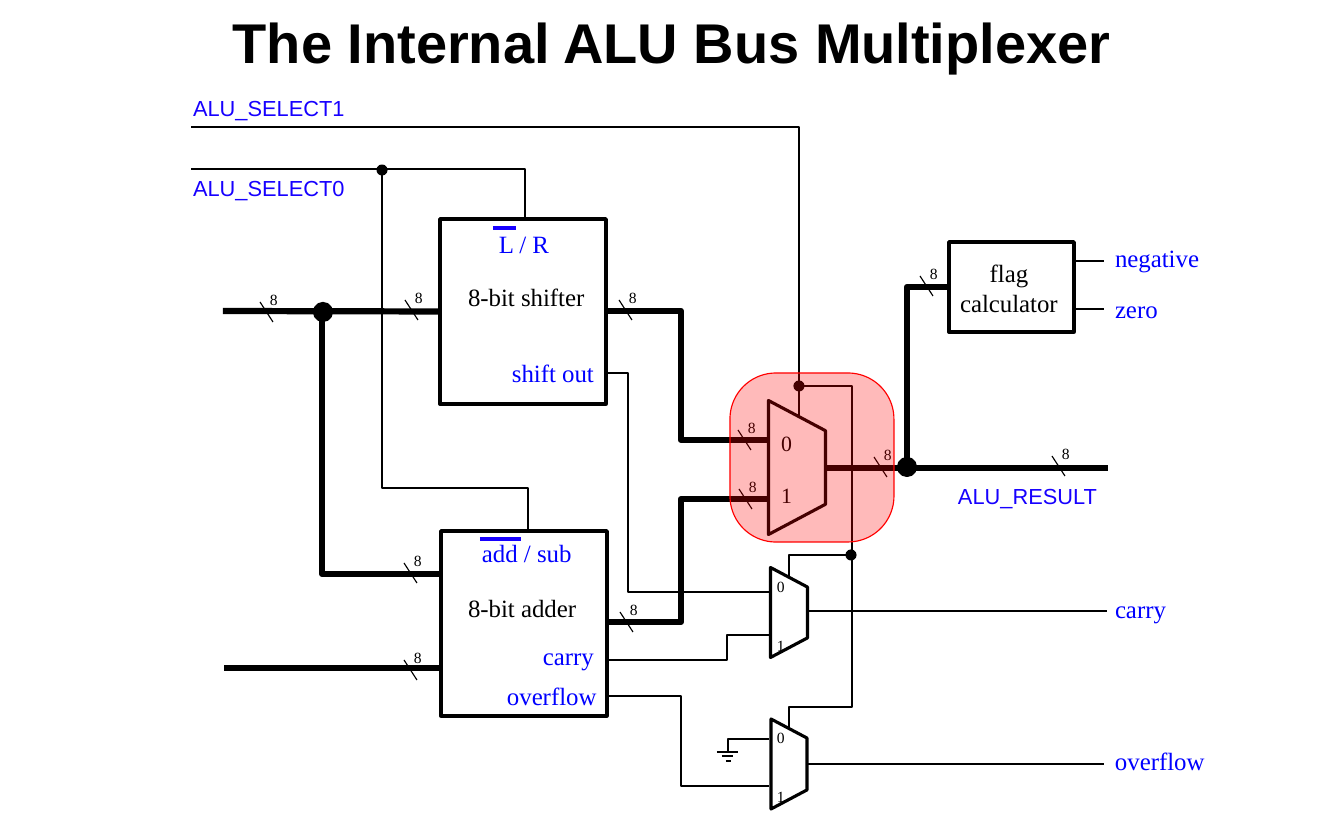
from pptx import Presentation
from pptx import util as u
from pptx.dml.color import RGBColor
from pptx.enum import shapes, text
from pptx.oxml import parse_xml
from pptx.oxml.ns import nsdecls, qn
from lxml import etree

EMU = 914400 / 112
SERIF, SANS = "Times New Roman", "Arial"
BLACK, WHITE, RED = "000000", "FFFFFF", "FF0000"
SIGNAL, SELECT = "0000FF", "1700FF"
BUS, WIRE, EDGE, BLOCK, THIN = 4, 1.5, 2, 2.25, 0.75

TITLE = "The Internal ALU Bus Multiplexer"
BLOCKS = {"shifter": (440, 219, 166, 185), "adder": (441, 531, 166, 185),
          "flags": (949, 242, 125, 90)}
MUXES = [(730, 439, 134, 57), (744, 594, 90, 37), (744, 746, 90, 36)]
MUX_LABELS = [(770, 424, 54, 95, 14, 17, True), (766, 571, 30, 81, 10, 26, False),
              (766, 722, 30, 81, 10, 26, False)]
BLOCK_LABELS = [
    (952, 258, 114, 60, ["flag", "calculator"], BLACK),
    (468, 593, 120, 30, ["8-bit adder"], BLACK),
    (468, 282, 120, 30, ["8-bit shifter"], BLACK),
    (482, 538, 100, 30, ["add / sub"], SIGNAL),
    (543, 641, 60, 30, ["carry"], SIGNAL),
    (507, 681, 97, 30, ["overflow"], SIGNAL),
    (499, 229, 70, 30, ["L / R"], SIGNAL),
    (512, 358, 92, 30, ["shift out"], SIGNAL),
    (1115, 594, 60, 30, ["carry"], SIGNAL),
    (1115, 746, 97, 30, ["overflow"], SIGNAL),
    (1115, 243, 96, 30, ["negative"], SIGNAL),
    (1115, 294, 60, 30, ["zero"], SIGNAL),
]
SELECT_LABELS = [(182, 89, 176, "ALU_SELECT1"), (182, 169, 176, "ALU_SELECT0"),
                 (947, 477, 162, "ALU_RESULT")]
LINES = [
    (741, 441, 769, 441, EDGE, BLACK), (740, 498, 768, 498, EDGE, BLACK),
    (808, 611, 1107, 611, WIRE, BLACK), (807, 764, 1104, 764, WIRE, BLACK),
    (480, 539, 521, 539, EDGE, SELECT), (493, 228, 516, 228, EDGE, SELECT),
    (224, 668, 440, 668, BUS, BLACK), (827, 468, 1108, 468, BUS, BLACK),
    (1075, 261, 1104, 261, WIRE, BLACK), (1074, 309, 1104, 309, WIRE, BLACK),
    (717, 752, 738, 752, WIRE, BLACK), (722, 756, 733, 756, WIRE, BLACK),
    (726, 761, 731, 761, WIRE, BLACK),
]
ROUTES = [
    (BUS, [(608, 622), (681, 622), (681, 499), (769, 499)]),
    (BUS, [(607, 311), (681, 311), (681, 440), (769, 440)]),
    (BUS, [(322, 311), (322, 574), (440, 574)]),
    (BUS, [(907, 466), (907, 287), (949, 287)]),
    (WIRE, [(528, 531), (528, 488), (382, 488), (382, 169)]),
    (WIRE, [(525, 219), (525, 169), (191, 169)]),
    (WIRE, [(799, 416), (799, 127), (191, 127)]),
    (WIRE, [(789, 578), (789, 555), (851, 555)]),
    (WIRE, [(607, 696), (681, 696), (681, 786), (769, 786)]),
    (WIRE, [(606, 373), (628, 373), (628, 592), (771, 592)]),
    (WIRE, [(608, 660), (727, 660), (727, 635), (769, 635)]),
    (WIRE, [(789, 729), (789, 707), (852, 707), (852, 386), (799, 386)]),
    (WIRE, [(728, 753), (728, 739), (769, 739)]),
]
BUS_MARKS = [(619, 300), (260, 302), (404, 563), (404, 660), (405, 300), (620, 612),
             (920, 276), (874, 457), (1052, 456), (738, 430), (739, 489)]
DOTS = [(851, 555, 8), (799, 386, 8), (382, 170, 8), (907, 467, 17), (323, 312, 17)]
HIGHLIGHT = (730, 373, 164, 169)


def px(*values):
    return [u.Emu(round(value * EMU)) for value in values]


def color(value):
    return RGBColor.from_string(value)


def finish(shape, fill, line, width):
    shape.shadow.inherit = False
    if fill:
        shape.fill.solid()
        shape.fill.fore_color.rgb = color(fill)
    else:
        shape.fill.background()
    shape.line.color.rgb = color(line)
    shape.line.width = u.Pt(width)
    return shape


def add_shape(kind, place, fill, line, width):
    return finish(page.shapes.add_shape(kind, *px(*place)), fill, line, width)


def add_line(x1, y1, x2, y2, width, line):
    wire = page.shapes.add_connector(shapes.MSO_CONNECTOR.STRAIGHT, *px(x1, y1, x2, y2))
    wire.line.color.rgb = color(line)
    wire.line.width = u.Pt(width)
    wire._element.spPr.append(parse_xml(f"<a:effectLst {nsdecls('a')}/>"))
    return wire


def add_span(para, words, size, font, ink):
    span = para.add_run()
    span.text = words
    span.font.size = u.Pt(size)
    span.font.name = font
    span.font.color.rgb = color(ink)
    return span


def add_label(place, lines, size, font, ink, inset=True, wrap=False, gap=0):
    frame = page.shapes.add_textbox(*px(*place)).text_frame
    frame.word_wrap = wrap
    frame.auto_size = text.MSO_AUTO_SIZE.SHAPE_TO_FIT_TEXT
    if not inset:
        frame.margin_left = frame.margin_right = frame.margin_top = frame.margin_bottom = 0
    for index, words in enumerate(lines):
        para = frame.add_paragraph() if index else frame.paragraphs[0]
        if index:
            para.space_before = u.Pt(gap)
        if len(lines) > 1 and not inset:
            para.alignment = text.PP_ALIGN.CENTER
        add_span(para, words, size, font, ink)


deck = Presentation()
deck.slide_width, deck.slide_height = px(1344, 840)
page = deck.slides.add_slide(deck.slide_layouts[5])

title = page.shapes.title
title.left, title.top, title.width, title.height = px(112, -1, 1120, 84)
title.text_frame.vertical_anchor = text.MSO_ANCHOR.MIDDLE
heading = title.text_frame.paragraphs[0]
heading.alignment = text.PP_ALIGN.CENTER
add_span(heading, TITLE, 36, SANS, BLACK).font.bold = True

for place, (x, y, w, h, size, gap, wrap) in zip(MUXES, MUX_LABELS):
    mux = add_shape(shapes.MSO_SHAPE.TRAPEZOID, place, WHITE, BLACK, EDGE)
    mux.adjustments[0] = 0.53
    mux.rotation = 90
    add_label((x, y, w, h), ["0", "1"], size, SERIF, BLACK, wrap=wrap, gap=gap)

blocks = {name: add_shape(shapes.MSO_SHAPE.RECTANGLE, place, None, BLACK, BLOCK)
          for name, place in BLOCKS.items()}
for *place, lines, ink in BLOCK_LABELS:
    add_label(place, lines, 16, SERIF, ink, inset=False, wrap=True)
for x, y, w, words in SELECT_LABELS:
    add_label((x, y, w, 38), [words], 14, SANS, SELECT)

for line in LINES:
    add_line(*line)
add_line(223, 311, 440, 311, BUS, BLACK).end_connect(blocks["shifter"], 1)

for width, points in ROUTES:
    builder = page.shapes.build_freeform(*points[0], scale=EMU)
    builder.add_line_segments(points[1:], close=False)
    finish(builder.convert_to_shape(), None, BLACK, width)

for x, y in BUS_MARKS:
    add_line(x, y, x + 13, y + 20, THIN, BLACK)
    add_label((x - 1, y - 18, 30, 30), ["8"], 10, SERIF, BLACK)

for x, y, size in DOTS:
    add_shape(shapes.MSO_SHAPE.OVAL, (x - size / 2, y - size / 2, size, size),
              BLACK, BLACK, EDGE)

highlight = add_shape(shapes.MSO_SHAPE.ROUNDED_RECTANGLE, HIGHLIGHT, RED, RED, THIN)
highlight.adjustments[0] = 0.28
tint = highlight._element.spPr.find(qn("a:solidFill"))[0]
etree.SubElement(tint, qn("a:alpha")).set("val", "27000")

deck.save("out.pptx")
